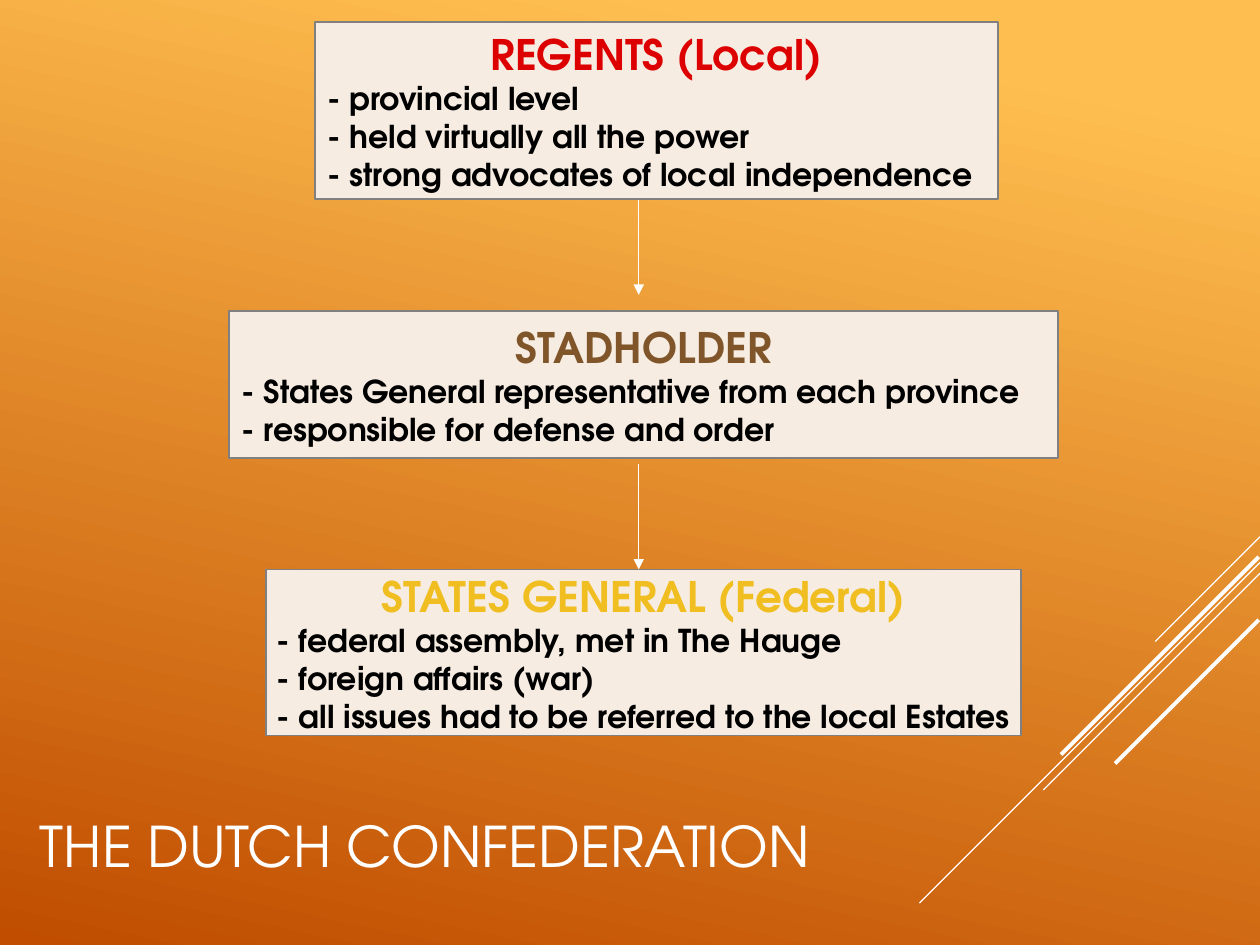
from pptx import Presentation, util as u
from pptx.dml.color import RGBColor
from pptx.enum import shapes, text
from pptx.oxml.ns import qn
from lxml import etree

Pt = u.Pt
FONT = "TeX Gyre Adventor"
COLORS = {
    "sky": "FFBF50", "ember": "C04D00", "white": "FFFFFF", "black": "000000",
    "panel": "F6ECE2", "border": "808080",
    "red": "DC0000", "brown": "80552A", "gold": "F0BE21",
}

# Content: heading, heading colour, points, (left, top, width, height)
TITLE = "THE DUTCH CONFEDERATION"
LEVELS = [
    ("REGENTS (Local)", "red",
     ["provincial level", "held virtually all the power",
      "strong advocates of local independence"],
     (180, 12.4, 390.2, 101.5)),
    ("STADHOLDER", "brown",
     ["States General representative from each province",
      "responsible for defense and order"],
     (131, 177.8, 473.8, 84.2)),
    ("STATES GENERAL (Federal)", "gold",
     ["federal assembly, met in The Hauge", "foreign affairs (war)",
      "all issues had to be referred to the local Estates"],
     (152, 325.4, 431.3, 95)),
]
ARROW_X = 365
ARROW_SPANS = [(114.2, 168.5), (265, 325.4)]  # top, bottom
# Diagonals at 45 degrees: right end x, y, horizontal run, line width
DIAGONALS = [
    (720, 306.7, 59.8, 0.75), (720, 321.5, 194.6, 0.75),
    (720, 327.6, 123.8, 0.75), (719.3, 318.2, 113, 2.25),
    (719.3, 354.2, 82.1, 2.25),
]


def color(name):
    return RGBColor.from_string(COLORS[name])


def style(para, size, shade, bold=False):
    para.font.name, para.font.size, para.font.bold = FONT, Pt(size), bold
    para.font.color.rgb = color(shade)


def add_line(page, start, end, width=0.75, arrow=False):
    line = page.shapes.add_connector(
        shapes.MSO_CONNECTOR.STRAIGHT, *map(Pt, start + end))
    line.line.color.rgb = color("white")
    line.line.width = Pt(width)
    if arrow:
        etree.SubElement(line.line._get_or_add_ln(), qn("a:tailEnd"), type="triangle")
    etree.SubElement(line._element.spPr, qn("a:effectLst"))


def add_level(page, heading, shade, points, frame):
    box = page.shapes.add_shape(shapes.MSO_SHAPE.RECTANGLE, *map(Pt, frame))
    box.shadow.inherit = False
    box.fill.solid()
    box.fill.fore_color.rgb = color("panel")
    box.line.color.rgb = color("border")
    box.line.width = Pt(1)
    body = box.text_frame
    body.word_wrap = False
    body.vertical_anchor = text.MSO_ANCHOR.MIDDLE
    para = body.paragraphs[0]
    para.text = heading
    para.alignment = text.PP_ALIGN.CENTER
    style(para, 24, shade, bold=True)
    for point in points:
        para = body.add_paragraph()
        para.text = "- " + point
        para.alignment = text.PP_ALIGN.LEFT
        style(para, 18, "black", bold=True)


deck = Presentation()
deck.slide_width, deck.slide_height = Pt(720), Pt(540)
page = deck.slides.add_slide(deck.slide_layouts[6])

# Background gradient
fill = page.background.fill
fill.gradient()
fill.gradient_angle = 258
for stop, name, position in zip(fill.gradient_stops, ("sky", "ember"), (0.1, 1)):
    stop.color.rgb = color(name)
    stop.position = position

# Corner diagonals
for x, y, run, width in DIAGONALS:
    add_line(page, (x, y), (x - run, y + run), width)

# Levels of government and the arrows between them
for level in LEVELS:
    add_level(page, *level)
for top, bottom in ARROW_SPANS:
    add_line(page, (ARROW_X, top), (ARROW_X, bottom), arrow=True)

# Title
title = page.shapes.add_textbox(Pt(15.8), Pt(444.2), Pt(516.2), Pt(77.8)).text_frame
title.word_wrap = True
title.vertical_anchor = text.MSO_ANCHOR.MIDDLE
title.paragraphs[0].text = TITLE
style(title.paragraphs[0], 32, "white")

deck.save("out.pptx")
